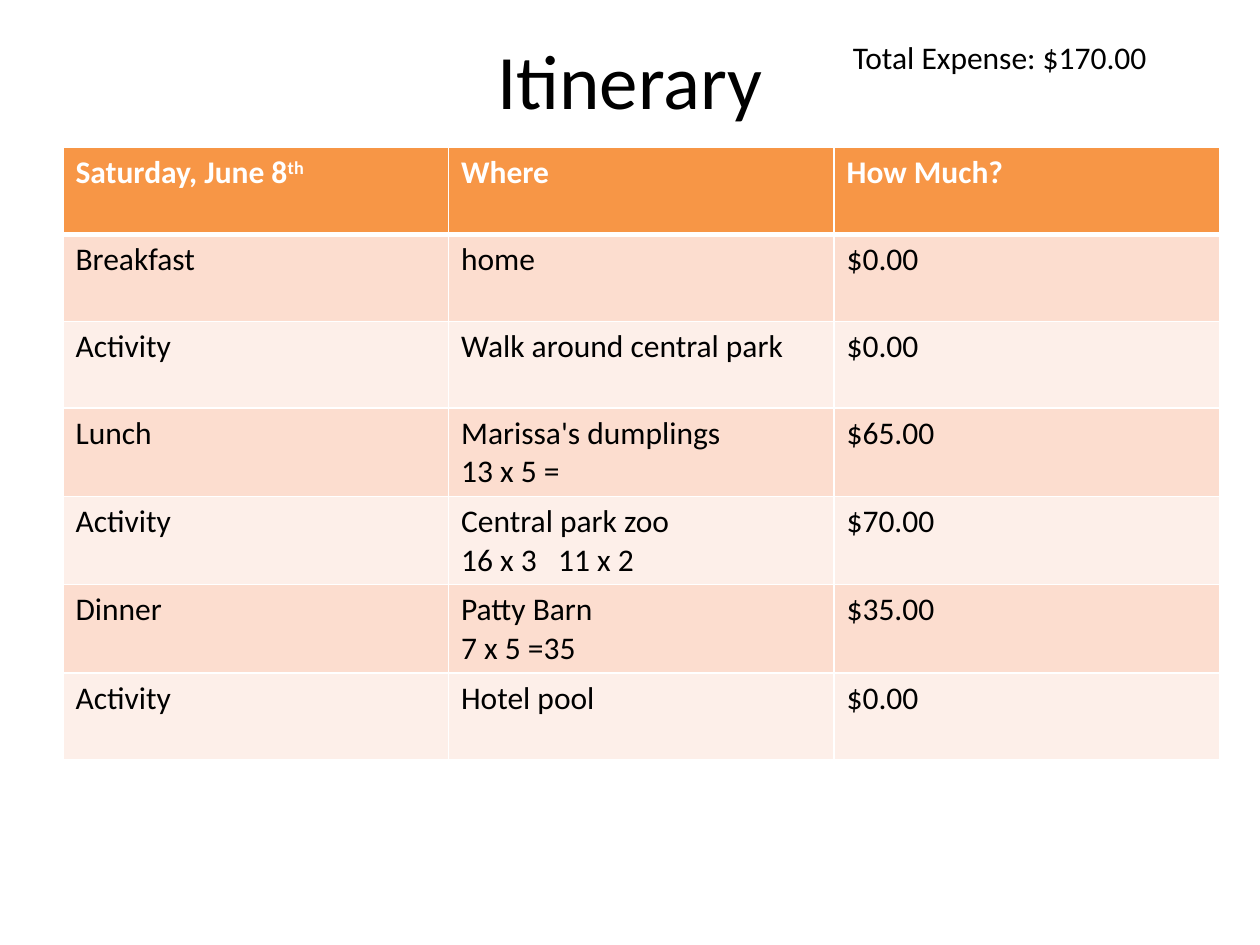
from typing import NamedTuple

from lxml import etree
from pptx import Presentation
from pptx.dml.color import RGBColor
from pptx.enum.text import MSO_ANCHOR, PP_ALIGN
from pptx.oxml.ns import qn
from pptx.util import Inches, Pt

MIDDLE = MSO_ANCHOR.MIDDLE
LEFT, CENTER = PP_ALIGN.LEFT, PP_ALIGN.CENTER

BLACK = RGBColor(0x00, 0x00, 0x00)
WHITE = RGBColor(0xFF, 0xFF, 0xFF)
ORANGE = RGBColor(0xF7, 0x96, 0x46)
BANDS = (RGBColor(0xFC, 0xDD, 0xCF), RGBColor(0xFD, 0xEF, 0xE9))

FONT = "Calibri"
BODY_SIZE = 18
COL_WIDTH, ROW_HEIGHT = Inches(3.06), Inches(0.69)
TAB_STOP = Inches(0.77)


class Entry(NamedTuple):
    what: str
    where: str
    cost: str


HEADER = Entry("Saturday, June 8", "Where", "How Much?")
ENTRIES = [
    Entry("Breakfast", "home", "$0.00"),
    Entry("Activity", "Walk around central park", "$0.00"),
    Entry("Lunch", "Marissa's dumplings\n13 x 5 =", "$65.00"),
    Entry("Activity", "Central park zoo\n16 x 3\t11 x 2", "$70.00"),
    Entry("Dinner", "Patty Barn\n7 x 5 =35", "$35.00"),
    Entry("Activity", "Hotel pool", "$0.00"),
]


def style(p, size: float, color: RGBColor, bold: bool = False) -> None:
    p.font.name = FONT
    p.font.size = Pt(size)
    p.font.bold = bold
    p.font.color.rgb = color


def add_text(s, box: tuple, text: str, size: float, align=LEFT) -> None:
    tf = s.shapes.add_textbox(*(Inches(v) for v in box)).text_frame
    tf.word_wrap = True
    tf.vertical_anchor = MIDDLE
    p = tf.paragraphs[0]
    p.text = text
    p.alignment = align
    style(p, size, BLACK)


def add_tab_stop(p) -> None:
    tabs = etree.Element(qn("a:tabLst"))
    etree.SubElement(tabs, qn("a:tab"), pos=str(TAB_STOP), algn="l")
    p_pr = p._p.get_or_add_pPr()
    p_pr.insert(0, tabs)


def add_borders(cell, bottom: float) -> None:
    """Draw white cell edges; call before setting the fill, which must follow them."""
    tc_pr = cell._tc.get_or_add_tcPr()
    for side, width in (("L", 1), ("R", 1), ("T", 1), ("B", bottom)):
        ln = etree.SubElement(tc_pr, qn(f"a:ln{side}"), w=str(Pt(width)))
        fill = etree.SubElement(ln, qn("a:solidFill"))
        etree.SubElement(fill, qn("a:srgbClr"), val=str(WHITE))


def fill_row(cells, entry: Entry, fill: RGBColor, color: RGBColor,
             bold: bool = False, bottom: float = 1) -> None:
    for cell, text in zip(cells, entry):
        add_borders(cell, bottom)
        cell.fill.solid()
        cell.fill.fore_color.rgb = fill
        cell.text_frame.text = text
        for p in cell.text_frame.paragraphs:
            style(p, BODY_SIZE, color, bold)
            if "\t" in p.text:
                add_tab_stop(p)


def add_itinerary(s) -> None:
    rows, cols = len(ENTRIES) + 1, len(HEADER)
    table = s.shapes.add_table(rows, cols, Inches(0.5), Inches(1.17),
                               COL_WIDTH * cols, ROW_HEIGHT * rows).table
    for col in table.columns:
        col.width = COL_WIDTH
    for row in table.rows:
        row.height = ROW_HEIGHT

    fill_row(table.rows[0].cells, HEADER, ORANGE, WHITE, bold=True, bottom=3)
    r = table.cell(0, 0).text_frame.paragraphs[0].add_run()
    r.text = "th"
    r.font._element.set("baseline", "30000")

    for i, entry in enumerate(ENTRIES):
        fill_row(table.rows[i + 1].cells, entry, BANDS[i % 2], BLACK)


def main() -> None:
    prs = Presentation()
    prs.slide_width, prs.slide_height = Inches(10), Inches(7.5)
    s = prs.slides.add_slide(prs.slide_layouts[6])
    add_text(s, (0.5, 0, 9, 1.25), "Itinerary", 44, CENTER)
    add_text(s, (6.67, 0.25, 3.08, 0.4), "Total Expense: $170.00", BODY_SIZE)
    add_itinerary(s)
    prs.save("out.pptx")


if __name__ == "__main__":
    main()
